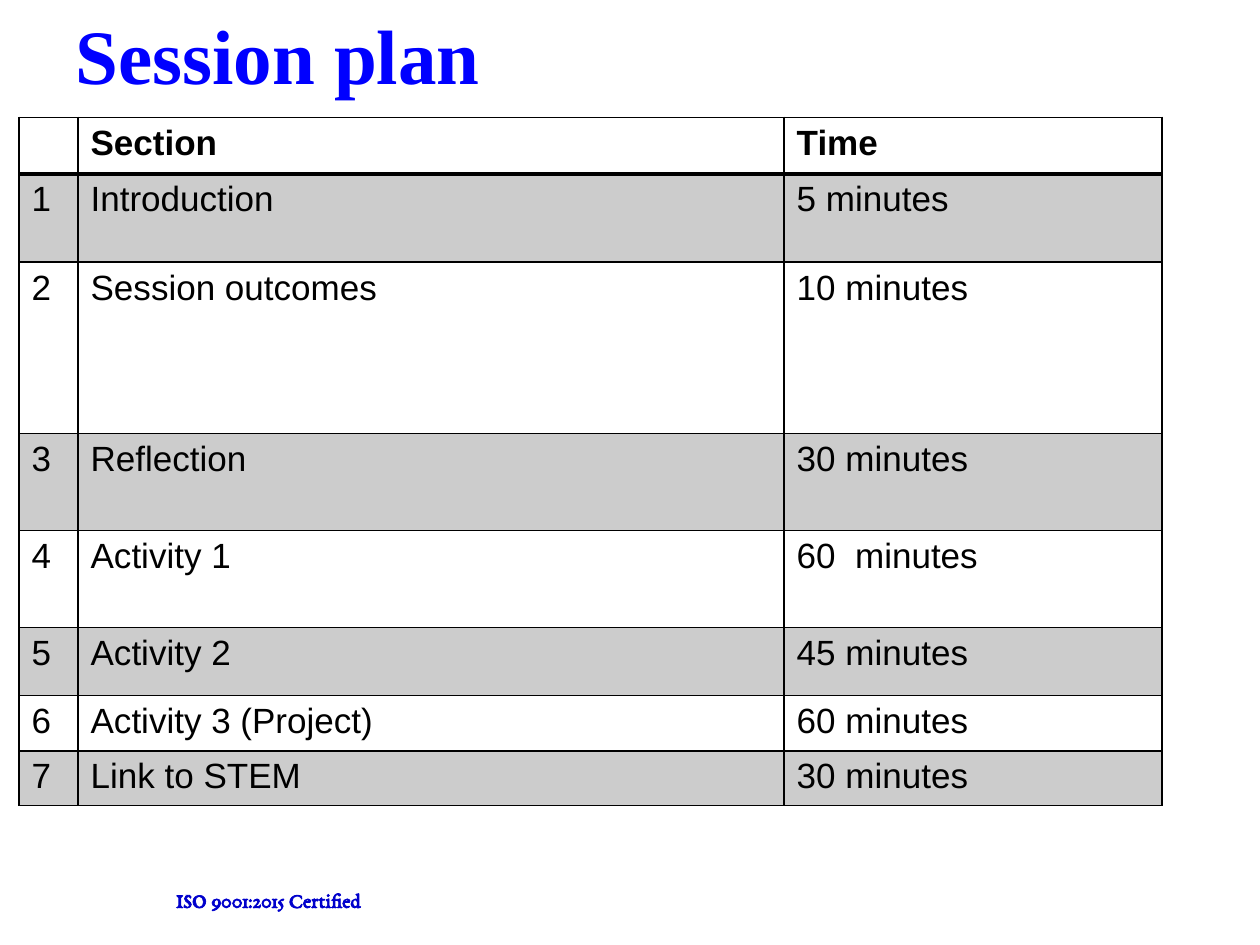
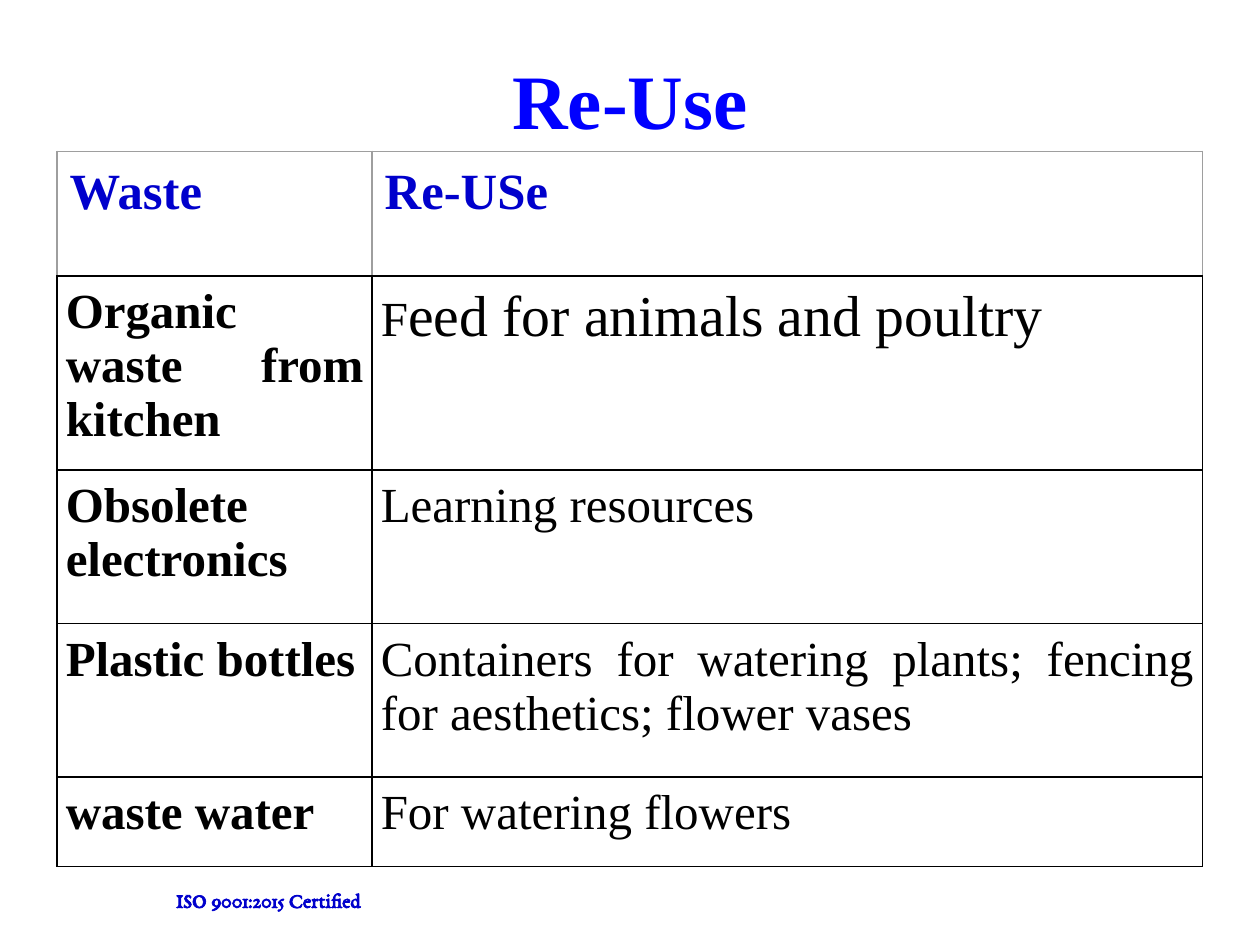
from lxml import etree
from pptx import Presentation
from pptx.dml.color import RGBColor
from pptx.enum import text
from pptx.oxml.ns import qn
from pptx.util import Pt

COLORS = {"title": "0000FF", "accent": "0000CC", "ink": "000000", "rule": "9E9E9E"}
SERIF, SANS, FOOTER = "Times New Roman", "Arial", "EB Garamond"
ALIGN = text.PP_ALIGN


def write(tf, content, size, font, color="ink", bold=False, align=ALIGN.LEFT):
    """Add one run to the first paragraph of a text frame."""
    p = tf.paragraphs[0]
    p.alignment = align
    r = p.add_run()
    r.text = content
    r.font.size, r.font.name, r.font.bold = Pt(size), font, bold
    r.font.color.rgb = RGBColor.from_string(COLORS[color])


def frame_cell(cell, inset, borders, shade=None):
    """Set insets, the four borders and an optional black tint in percent."""
    cell.margin_left = cell.margin_right = Pt(inset[0])
    cell.margin_top = cell.margin_bottom = Pt(inset[1])
    tc_pr = cell._tc.get_or_add_tcPr()
    for side in "LRTB":
        color, width = borders[side]
        ln = etree.SubElement(tc_pr, qn("a:ln" + side), w=str(Pt(width)))
        fill = etree.SubElement(ln, qn("a:solidFill"))
        etree.SubElement(fill, qn("a:srgbClr"), val=COLORS[color])
    if shade is None:
        cell.fill.background()
    else:
        cell.fill.solid()
        cell.fill.fore_color.rgb = RGBColor.from_string(COLORS["ink"])
        clr = tc_pr.find(qn("a:solidFill")).find(qn("a:srgbClr"))
        etree.SubElement(clr, qn("a:alpha"), val=str(shade * 1000))


prs = Presentation()
prs.slide_width, prs.slide_height = Pt(720), Pt(540)

# Slide titles and table grids
pages = [
    dict(title="Session plan", title_box=(36, 21.6, 438.5, 18), align=ALIGN.LEFT,
         at=(10.8, 67), cols=(33.8, 403.5, 216),
         rows=(32.4, 50.4, 97.9, 55.4, 55.4, 38.9, 31.7, 30.2)),
    dict(title="Re-Use", title_box=(36, 11.5, 648, 90), align=ALIGN.CENTER,
         at=(32.6, 86.4), cols=(180, 474.5), rows=(71.3, 87.8, 87.8, 87.8, 51.1)),
]
tables = []
for page in pages:
    s = prs.slides.add_slide(prs.slide_layouts[6])

    # Footer
    tf = s.shapes.add_textbox(Pt(93.6), Pt(503.3), Pt(373.7), Pt(21.6)).text_frame
    tf.word_wrap = True
    write(tf, "ISO 9001:2015 Certified", 12, FOOTER, "accent", bold=True)

    # Title
    tf = s.shapes.add_textbox(*map(Pt, page["title_box"])).text_frame
    tf.word_wrap = True
    tf.vertical_anchor = text.MSO_ANCHOR.MIDDLE
    write(tf, page["title"], 44, SERIF, "title", bold=True, align=page["align"])

    # Empty table grid
    cols, rows = page["cols"], page["rows"]
    size = (sum(cols), sum(rows))
    tbl = s.shapes.add_table(len(rows), len(cols), *map(Pt, page["at"] + size)).table
    tbl.first_row = tbl.horz_banding = False
    for col, width in zip(tbl.columns, cols):
        col.width = Pt(width)
    for row, height in zip(tbl.rows, rows):
        row.height = Pt(height)
    tables.append(tbl)
plan, reuse = tables
thin = dict.fromkeys("LRTB", ("ink", 1))

# Session plan: numbered sections, odd rows tinted
sections = [
    ("Section", "Time"),
    ("Introduction", "5 minutes"),
    ("Session outcomes", "10 minutes"),
    ("Reflection", "30 minutes"),
    ("Activity 1", "60  minutes"),
    ("Activity 2", "45 minutes"),
    ("Activity 3 (Project)", "60 minutes"),
    ("Link to STEM", "30 minutes"),
]
for i, (section, time) in enumerate(sections):
    top = ("ink", 2 if i == 1 else 1)
    bottom = ("ink", 2 if i == 0 else 1)
    for j, content in enumerate((str(i) if i else "", section, time)):
        cell = plan.cell(i, j)
        frame_cell(cell, (7.2, 3.6), {**thin, "T": top, "B": bottom},
                   shade=20 if i % 2 else None)
        if content:
            write(cell.text_frame, content, 20, SANS, bold=i == 0)

# Re-use table: heading row with grey rules
gray = {**dict.fromkeys("LRT", ("rule", 0.75)), "B": ("ink", 1)}
for j, heading in enumerate(("Waste", "Re-USe")):
    cell = reuse.cell(0, j)
    frame_cell(cell, (7.2, 7.2), gray)
    write(cell.text_frame, heading, 29, SERIF, "accent", bold=True)

# Re-use table: each use is a list of (text, size) runs
uses = [
    ("Organic waste from kitchen", [("F", 28), ("eed for animals and poultry", 33)]),
    ("Obsolete electronics", [("Learning resources", 28)]),
    ("Plastic bottles",
     [("Containers for watering plants; fencing for aesthetics; flower vases", 28)]),
    ("waste water", [("For watering flowers", 28)]),
]
for i, (waste, use) in enumerate(uses, 1):
    for j, runs in enumerate(([(waste, 28)], use)):
        cell = reuse.cell(i, j)
        frame_cell(cell, (5, 5), thin)
        for content, size in runs:
            write(cell.text_frame, content, size, SERIF, bold=j == 0, align=ALIGN.JUSTIFY)

prs.save("out.pptx")
